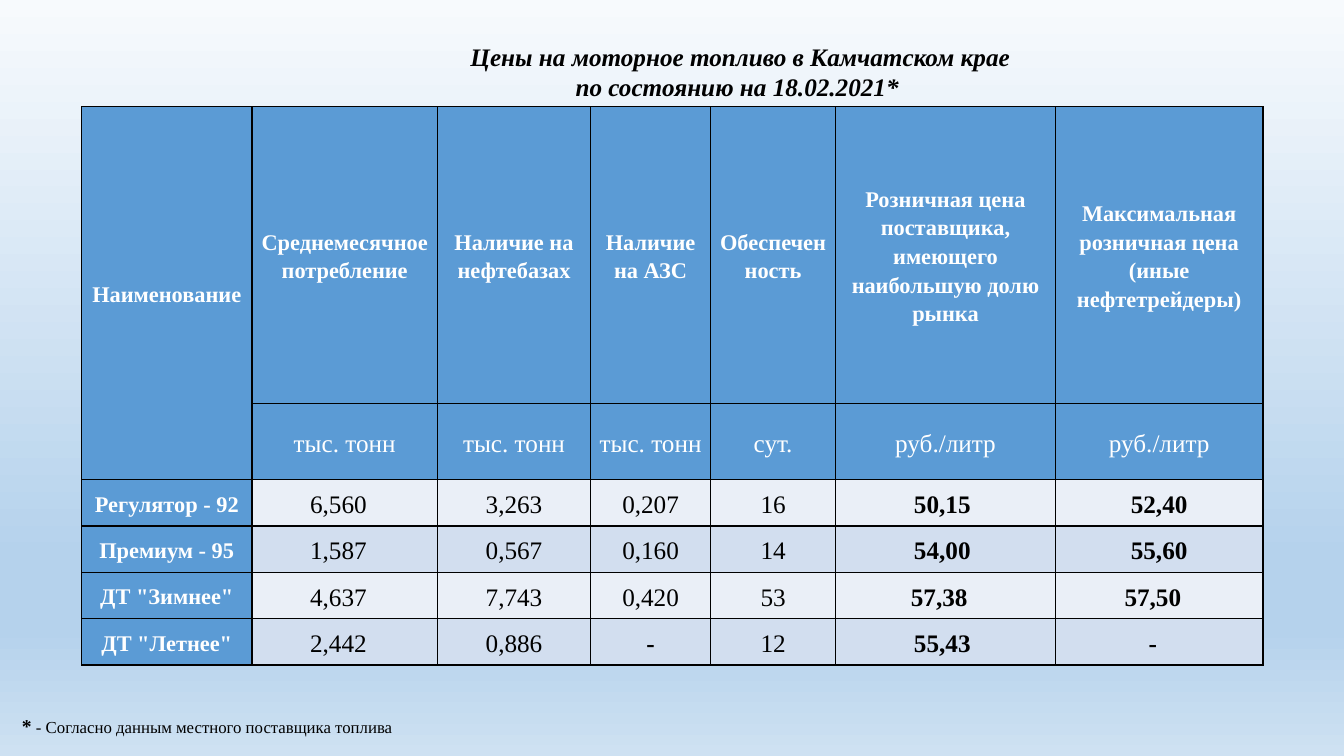
from lxml.etree import SubElement
from pptx import Presentation
from pptx.dml.color import RGBColor
from pptx.enum.text import MSO_ANCHOR as Anchor, MSO_AUTO_SIZE as AutoSize, PP_ALIGN as Align
from pptx.oxml.ns import qn
from pptx.util import Pt

COLORS = {"header": "5B9BD5", "light": "EAEFF7", "dark": "D2DEEF",
          "white": "FFFFFF", "black": "000000"}
BACKGROUND_STOPS = [(0, "F7FAFD"), (74, "B5D2EC"), (83, "B5D2EC"), (100, "CEE1F2")]

TITLE = ["Цены на моторное топливо в Камчатском крае", "по состоянию на 18.02.2021* "]
HEADINGS = ["Наименование", "Среднемесячное потребление", "Наличие на нефтебазах",
            "Наличие на АЗС", "Обеспеченность",
            "Розничная цена поставщика, имеющего наибольшую долю рынка",
            "Максимальная розничная цена\n(иные нефтетрейдеры)"]
UNITS = ["", "тыс. тонн", "тыс. тонн", "тыс. тонн", "сут.", "руб./литр", "руб./литр"]
FUELS = [
    ["Регулятор - 92", "6,560", "3,263", "0,207", "16", "50,15", "52,40"],
    ["Премиум - 95", "1,587", "0,567", "0,160", "14", "54,00", "55,60"],
    ['ДТ "Зимнее"', "4,637", "7,743", "0,420", "53", "57,38", "57,50"],
    ['ДТ "Летнее"', "2,442", "0,886", "-", "12", "55,43", "-"],
]
RIGHT_INDENTS = {1: [9, 9, 9, 9], 5: [4.5, 4.5, 9, 4.5], 6: [0, 0, 9, 9]}
COLUMN_WIDTHS = [121.7, 132.5, 109.4, 85.7, 89.3, 157, 148.3]
ROW_HEIGHTS = [211.7, 54.7] + [33.1] * len(FUELS)
FIRST_PRICE_COLUMN = 5


class SlideBuilder:
    """Hold the text style and the current slide, and add elements to it."""

    def __init__(self, presentation, font="Times New Roman"):
        """Add a title-only slide to the presentation."""
        self.font = font
        self.slide = presentation.slides.add_slide(presentation.slide_layouts[5])

    def background(self, stops):
        """Fill the background with a gradient running from top to bottom."""
        fill = self.slide.background.fill
        fill.gradient()
        fill.gradient_angle = 270
        stop_list = self.slide.element.find(".//" + qn("a:gsLst"))
        for old_stop in list(stop_list):
            stop_list.remove(old_stop)
        for position, color in stops:
            stop = SubElement(stop_list, qn("a:gs"), pos=str(position * 1000))
            SubElement(stop, qn("a:srgbClr"), val=color)

    def run(self, paragraph, text, size, color="black", bold=False, italic=False):
        """Add one formatted run to a paragraph."""
        run = paragraph.add_run()
        run.text = text
        font = run.font
        font.name, font.size, font.bold, font.italic = self.font, Pt(size), bold, italic
        font.color.rgb = RGBColor.from_string(COLORS[color])

    def title(self, lines, left, top, width, height):
        """Move the title placeholder and write its centred lines."""
        shape = self.slide.shapes.title
        shape.left, shape.top, shape.width, shape.height = map(Pt, (left, top, width, height))
        frame = shape.text_frame
        frame.word_wrap = False
        frame.auto_size = AutoSize.SHAPE_TO_FIT_TEXT
        frame.vertical_anchor = Anchor.TOP
        for index, line in enumerate(lines):
            paragraph = frame.add_paragraph() if index else frame.paragraphs[0]
            paragraph.alignment = Align.CENTER
            self.run(paragraph, line, 18, bold=True, italic=True)

    def footnote(self, mark, text, left, top, width, height):
        """Add a note that starts with a larger bold mark."""
        shape = self.slide.shapes.add_textbox(*map(Pt, (left, top, width, height)))
        frame = shape.text_frame
        frame.word_wrap = True
        frame.auto_size = AutoSize.SHAPE_TO_FIT_TEXT
        self.run(frame.paragraphs[0], mark, 14, bold=True)
        self.run(frame.paragraphs[0], text, 12)

    def table(self, left, top, widths, heights):
        """Add an unstyled table with the given column widths and row heights."""
        table = self.slide.shapes.add_table(
            len(heights), len(widths), Pt(left), Pt(top),
            Pt(sum(widths)), Pt(sum(heights))).table
        table.first_row = table.horz_banding = False
        for column, width in zip(table.columns, widths):
            column.width = Pt(width)
        for row, height in zip(table.rows, heights):
            row.height = Pt(height)
        return table

    def cell(self, cell, text, fill, size, color, bold, indent=0):
        """Fill, outline and write one centred table cell."""
        cell.fill.solid()
        cell.fill.fore_color.rgb = RGBColor.from_string(COLORS[fill])
        cell.vertical_anchor = Anchor.MIDDLE
        cell.margin_left, cell.margin_right = Pt(5), Pt(5 + indent)
        cell.margin_top = cell.margin_bottom = 0
        self.borders(cell)
        frame = cell.text_frame
        for index, line in enumerate(text.split("\n") if text else []):
            paragraph = frame.add_paragraph() if index else frame.paragraphs[0]
            paragraph.alignment = Align.CENTER
            paragraph.line_spacing = 1.15
            self.run(paragraph, line, size, color, bold)

    def borders(self, cell):
        """Draw a thin black line on each side of a cell."""
        properties = cell._tc.get_or_add_tcPr()
        for index, side in enumerate("LRTB"):
            line = SubElement(properties, qn("a:ln" + side), w=str(Pt(1)))
            properties.insert(index, line)
            SubElement(SubElement(line, qn("a:solidFill")), qn("a:srgbClr"),
                       val=COLORS["black"])


def main():
    """Build the fuel price slide and save it."""
    presentation = Presentation()
    presentation.slide_width, presentation.slide_height = Pt(960), Pt(540)
    builder = SlideBuilder(presentation)
    builder.background(BACKGROUND_STOPS)
    builder.title(TITLE, 326.9, 25.9, 403.9, 51)

    table = builder.table(58.3, 76.3, COLUMN_WIDTHS, ROW_HEIGHTS)
    for column, (heading, unit) in enumerate(zip(HEADINGS, UNITS)):
        builder.cell(table.cell(0, column), heading, "header", 16, "white", True)
        builder.cell(table.cell(1, column), unit, "header", 18, "white", False)
    table.cell(0, 0).merge(table.cell(1, 0))
    for index, (name, *values) in enumerate(FUELS):
        row = index + 2
        builder.cell(table.cell(row, 0), name, "header", 16, "white", True)
        band = "dark" if index % 2 else "light"
        for column, value in enumerate(values, start=1):
            bold = column >= FIRST_PRICE_COLUMN or value == "-"
            indent = RIGHT_INDENTS[column][index] if column in RIGHT_INDENTS else 0
            builder.cell(table.cell(row, column), value, band, 18, "black", bold, indent)

    builder.footnote("*", " - Согласно данным местного поставщика топлива",
                     8.6, 506.2, 430.6, 24.5)
    presentation.save("out.pptx")


if __name__ == "__main__":
    main()
